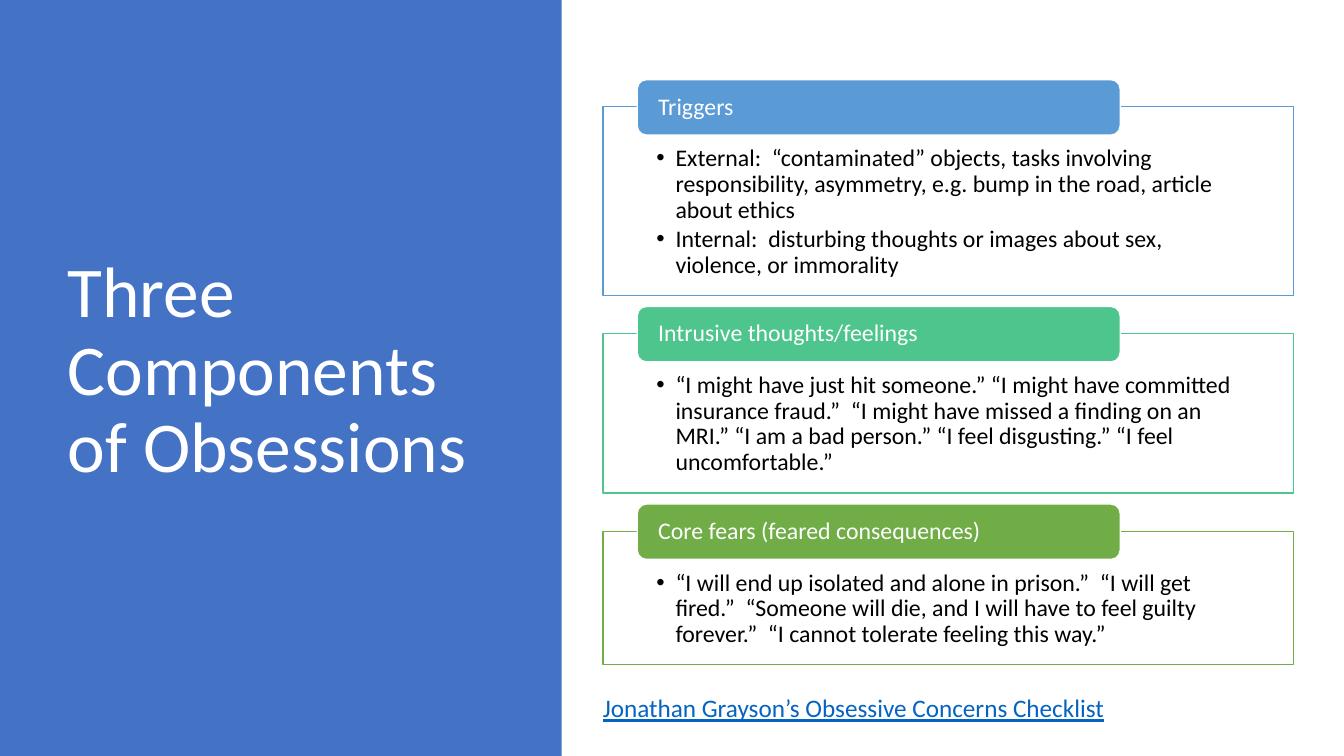
from lxml import etree
from pptx import Presentation
from pptx import util as u
from pptx.dml.color import RGBColor
from pptx.enum import shapes, text
from pptx.oxml import ns

BLUE = RGBColor(0x44, 0x72, 0xC4)
SKY = RGBColor(0x5B, 0x9B, 0xD5)
MINT = RGBColor(0x4D, 0xC5, 0x8D)
GREEN = RGBColor(0x70, 0xAD, 0x47)
LINK = RGBColor(0x05, 0x63, 0xC1)
WHITE = RGBColor(0xFF, 0xFF, 0xFF)
BLACK = RGBColor(0, 0, 0)

TITLE = "Three Components of Obsessions"
SOURCE = "Jonathan Grayson’s Obsessive Concerns Checklist"
COMPONENTS = [
    ("Triggers", SKY, 1.87, [
        "External:  “contaminated” objects, tasks involving responsibility, "
        "asymmetry, e.g. bump in the road, article about ethics",
        "Internal:  disturbing thoughts or images about sex, violence, or immorality",
    ]),
    ("Intrusive thoughts/feelings", MINT, 1.58, [
        "“I might have just hit someone.” “I might have committed insurance fraud.”  "
        "“I might have missed a finding on an MRI.” “I am a bad person.” "
        "“I feel disgusting.” “I feel uncomfortable.”",
    ]),
    ("Core fears (feared consequences)", GREEN, 1.32, [
        "“I will end up isolated and alone in prison.”  “I will get fired.”  "
        "“Someone will die, and I will have to feel guilty forever.”  "
        "“I cannot tolerate feeling this way.”",
    ]),
]

WIDTH, HEIGHT = 13.33, 7.5
PANEL_WIDTH = 5.57
BOX_LEFT, BOX_WIDTH, FIRST_TOP, GAP = 5.98, 6.85, 1.06, 0.38
TAB_LEFT, TAB_WIDTH, TAB_HEIGHT, TAB_RISE = 6.32, 4.79, 0.55, 0.27


def place(item, left, top, width, height):
    item.left, item.top, item.width, item.height = map(
        u.Inches, (left, top, width, height))


def add_block(page, preset, area, fill, line=None):
    block = page.shapes.add_shape(preset, *map(u.Inches, area))
    block.shadow.inherit = False
    block.fill.solid()
    block.fill.fore_color.rgb = fill
    if line is None:
        block.line.fill.background()
    else:
        block.line.color.rgb = line
        block.line.width = u.Pt(1)
    return block


def write(shape, lines, size, color, anchor, insets, spacing=0.9):
    frame = shape.text_frame
    frame.word_wrap = True
    frame.auto_size = text.MSO_AUTO_SIZE.NONE
    frame.vertical_anchor = anchor
    (frame.margin_left, frame.margin_top,
     frame.margin_right, frame.margin_bottom) = map(u.Inches, insets)
    frame.text = "\n".join(lines)
    for para in frame.paragraphs:
        para.alignment = text.PP_ALIGN.LEFT
        para.line_spacing = spacing
        para.font.name = "Calibri"
        para.font.size = u.Pt(size)
        para.font.color.rgb = color
    return frame.paragraphs


def add_bullet(para):
    para.space_after = u.Pt(2.5)
    props = para._p.get_or_add_pPr()
    props.set("marL", str(u.Inches(0.19)))
    props.set("indent", str(-u.Inches(0.19)))
    font = etree.SubElement(props, ns.qn("a:buFont"), typeface="Arial")
    font.addnext(etree.Element(ns.qn("a:buChar"), char="•"))
    props.append(props.find(ns.qn("a:defRPr")))


def add_component(page, top, heading, color, height, points):
    box = add_block(page, shapes.MSO_SHAPE.RECTANGLE,
                    (BOX_LEFT, top, BOX_WIDTH, height), WHITE, color)
    for para in write(box, points, 17, BLACK, text.MSO_ANCHOR.TOP,
                      (0.53, 0.39, 0.53, 0.13)):
        add_bullet(para)
    tab = add_block(page, shapes.MSO_SHAPE.ROUNDED_RECTANGLE,
                    (TAB_LEFT, top - TAB_RISE, TAB_WIDTH, TAB_HEIGHT), color, WHITE)
    write(tab, [heading], 17, WHITE, text.MSO_ANCHOR.MIDDLE, (0.18, 0, 0.18, 0))


def main():
    deck = Presentation()
    deck.slide_width, deck.slide_height = u.Inches(WIDTH), u.Inches(HEIGHT)
    page = deck.slides.add_slide(deck.slide_layouts.get_by_name("Title Only"))

    panel = add_block(page, shapes.MSO_SHAPE.RECTANGLE,
                      (0, 0, PANEL_WIDTH, HEIGHT), BLUE)
    title = page.shapes.title
    title.element.addprevious(panel.element)
    place(title, 0.57, 0.68, 4.16, 6.02)
    write(title, [TITLE], 51, WHITE, text.MSO_ANCHOR.MIDDLE, (0.1, 0.05, 0.1, 0.05))

    top = FIRST_TOP
    for heading, color, height, points in COMPONENTS:
        add_component(page, top, heading, color, height, points)
        top += height + GAP

    source = page.shapes.add_textbox(*map(u.Inches, (5.88, 6.82, 7.45, 0.4)))
    for para in write(source, [SOURCE], 18, LINK, text.MSO_ANCHOR.TOP,
                      (0.1, 0.05, 0.1, 0.05), 1.0):
        para.font.underline = True

    deck.save("out.pptx")


if __name__ == "__main__":
    main()
